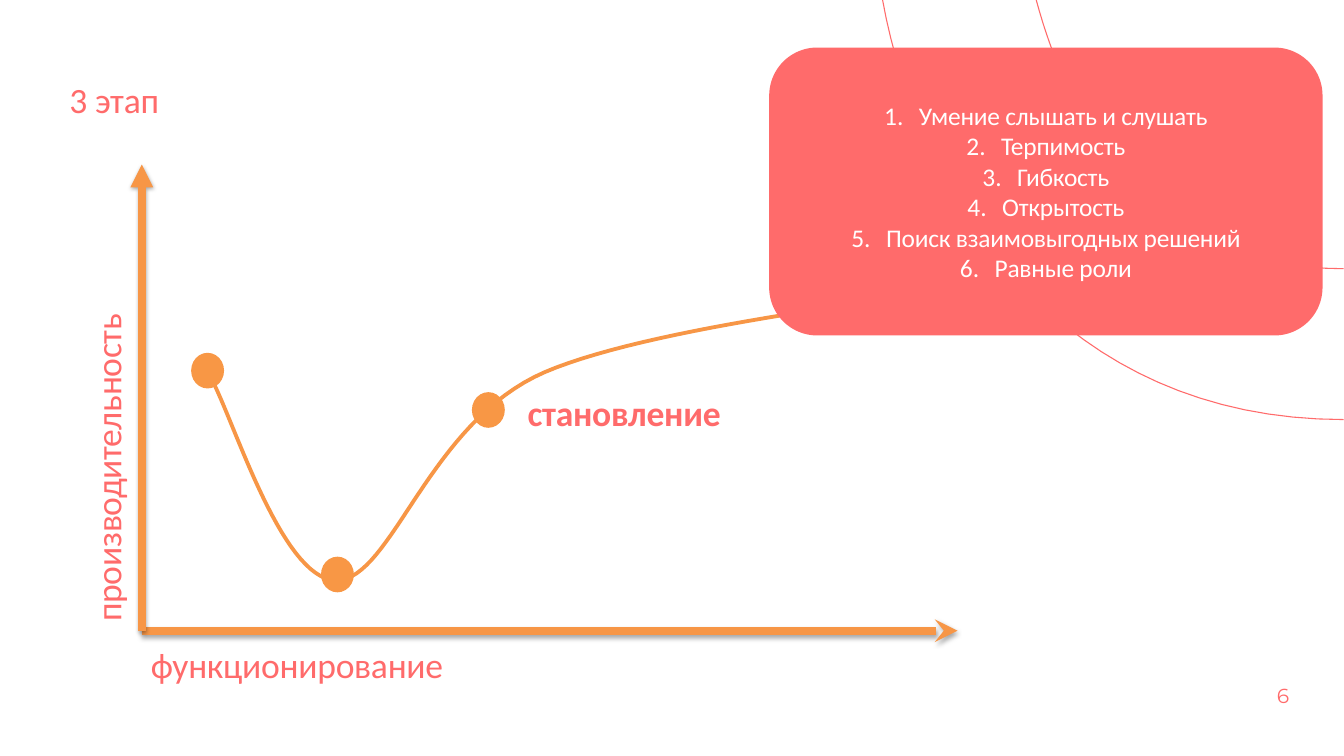
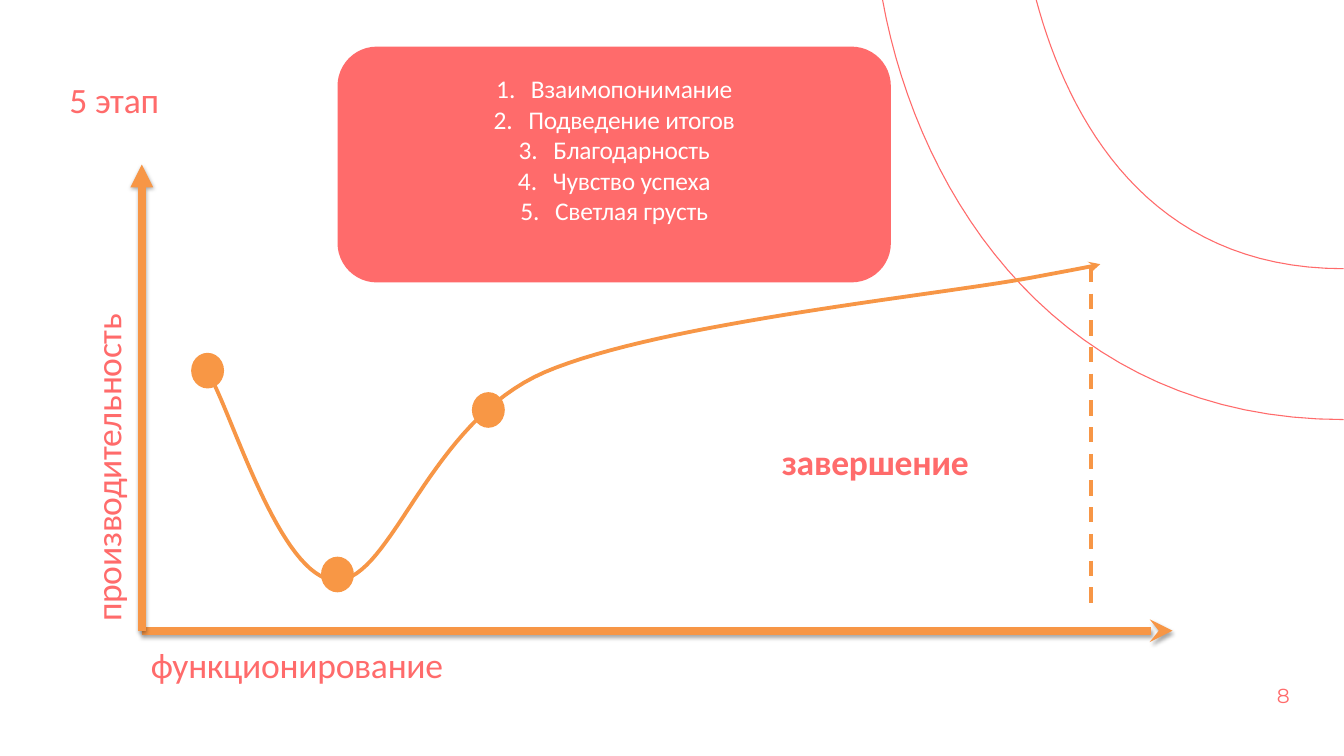
from lxml.etree import SubElement
from pptx import Presentation
from pptx.dml.color import RGBColor
from pptx.enum.dml import MSO_LINE_DASH_STYLE as Dash
from pptx.enum.shapes import MSO_CONNECTOR as Connector, MSO_SHAPE as Shape
from pptx.enum.text import MSO_ANCHOR as Anchor, PP_ALIGN as Align
from pptx.oxml import parse_xml
from pptx.oxml.ns import nsdecls, qn
from pptx.util import Inches, Pt

CORAL, ORANGE, DOT_ORANGE, WHITE = "FF6B6B", "F79646", "F89745", "FFFFFF"
ORIGIN = (1.55, 6.9)
ARCS = [
    [(11.33, 0), (11.68, 1.3), (12.55, 2.94), (14.69, 2.94)],
    [(9.65, 0), (10.05, 2.2), (11.62, 4.59), (14.69, 4.59)],
]
PRODUCTIVITY = [
    (2.28, 4.09), (2.52, 4.46), (3.06, 6.35), (3.68, 6.35),
    (4.29, 6.34), (4.68, 4.62), (5.96, 4.07),
    (7.25, 3.52), (10.36, 3.22), (11.37, 3.02),
    (12.39, 2.83), (11.92, 2.91), (12.03, 2.89),
]
STAGE_DOTS = [(2.09, 3.86), (3.51, 6.09), (5.16, 4.29)]


def color(hex_string):
    """Turn a hex string into a colour."""
    return RGBColor.from_string(hex_string)


def bezier(controls, steps=32):
    """Sample a chain of cubic curves that share their end points."""
    points = [controls[0]]
    for start in range(0, len(controls) - 1, 3):
        a, b, c, d = controls[start:start + 4]
        for step in range(1, steps + 1):
            t = step / steps
            u = 1 - t
            weights = (u ** 3, 3 * u * u * t, 3 * u * t * t, t ** 3)
            points.append(tuple(
                sum(w * v for w, v in zip(weights, axis)) for axis in zip(a, b, c, d)))
    return points


class Deck:
    """Holds the style and the current slide."""

    def __init__(self):
        """Start an empty presentation."""
        self.prs = Presentation()
        self.prs.slide_width, self.prs.slide_height = Pt(1058), Pt(595.5)
        self.slide = None

    def style(self, paragraph, size=28, hue=CORAL, font="Calibri", bold=False, spacing=-20):
        """Set the font of a whole paragraph."""
        paragraph.font.name = font
        paragraph.font.size = Pt(size)
        paragraph.font.bold = bold
        paragraph.font.color.rgb = color(hue)
        paragraph._p.pPr.find(qn("a:defRPr")).set("spc", str(spacing))

    def stroke(self, shape, hue, width, arrow=None):
        """Format a line and its arrowhead."""
        shape.line.color.rgb = color(hue)
        shape.line.width = Pt(width)
        if arrow:
            outline = shape._element.spPr.find(qn("a:ln"))
            SubElement(outline, qn("a:tailEnd"), type=arrow)

    def title(self, text):
        """Add a slide with its title."""
        self.slide = self.prs.slides.add_slide(self.prs.slide_layouts[5])
        heading = self.slide.shapes.title
        heading.left, heading.top = Inches(0.66), Inches(0.8)
        heading.width, heading.height = Inches(12.16), Inches(1.21)
        heading.text_frame.text = text
        heading.text_frame.vertical_anchor = Anchor.TOP
        paragraph = heading.text_frame.paragraphs[0]
        paragraph.alignment = Align.LEFT
        self.style(paragraph)

    def label(self, text, left, top, width, height, rotation=0, **font):
        """Add a line of text."""
        box = self.slide.shapes.add_textbox(*map(Inches, (left, top, width, height)))
        box.rotation = rotation
        box.text_frame.word_wrap = True
        box.text_frame.text = text
        self.style(box.text_frame.paragraphs[0], **font)
        return box

    def page_number(self, number):
        """Add the page number."""
        frame = self.label(str(number), 13.95, 7.46, 0.31, 0.28,
                           size=16, font="Montserrat", spacing=10).text_frame
        frame.margin_right = frame.margin_bottom = 0
        frame.margin_left = frame.margin_top = Inches(0.01)

    def curve(self, controls, hue, width, arrow=None):
        """Draw a smooth open curve."""
        start, *rest = [(Inches(x), Inches(y)) for x, y in bezier(controls)]
        builder = self.slide.shapes.build_freeform(*start)
        builder.add_line_segments(rest, close=False)
        outline = builder.convert_to_shape()
        outline.shadow.inherit = False
        outline.fill.background()
        self.stroke(outline, hue, width, arrow)

    def line(self, start, end, width, arrow=None, dash=None, shadow=False):
        """Draw a straight line, with a soft shadow if asked."""
        connector = self.slide.shapes.add_connector(
            Connector.STRAIGHT, *map(Inches, (*start, *end)))
        connector.line.dash_style = dash
        self.stroke(connector, ORANGE, width, arrow)
        effects = SubElement(connector._element.spPr, qn("a:effectLst"))
        if shadow:
            effects.append(parse_xml(
                f'<a:outerShdw {nsdecls("a")} blurRad="40000" dist="23000" dir="5400000" '
                'rotWithShape="0"><a:srgbClr val="000000"><a:alpha val="35000"/>'
                '</a:srgbClr></a:outerShdw>'))

    def block(self, kind, left, top, width, height, hue):
        """Add a filled shape without outline."""
        shape = self.slide.shapes.add_shape(kind, *map(Inches, (left, top, width, height)))
        shape.shadow.inherit = False
        shape.fill.solid()
        shape.fill.fore_color.rgb = color(hue)
        shape.line.fill.background()
        return shape

    def numbered_card(self, items, left, top, height, bottom_margin=0.05):
        """Add a rounded card with a numbered list."""
        frame = self.block(Shape.ROUNDED_RECTANGLE, left, top, 6.05, height, CORAL).text_frame
        frame.word_wrap = True
        frame.vertical_anchor = Anchor.MIDDLE
        frame.margin_bottom = Inches(bottom_margin)
        frame.text = "\n".join(items)
        for paragraph in frame.paragraphs:
            paragraph.alignment = Align.CENTER
            self.style(paragraph, size=20, hue=WHITE)
            properties = paragraph._p.pPr
            properties.set("marL", str(Inches(0.38)))
            properties.set("indent", str(-Inches(0.38)))
            properties.insert(0, parse_xml(
                f'<a:buAutoNum {nsdecls("a")} type="arabicPeriod"/>'))

    def stage(self, title, page, time_end, phase, phase_at):
        """Add a stage slide with the productivity diagram."""
        self.title(title)
        for arc in ARCS:
            self.curve(arc, CORAL, 0.85)
        self.page_number(page)
        self.curve(PRODUCTIVITY, ORANGE, 3, "stealth")
        self.line(ORIGIN, (time_end, ORIGIN[1]), 6, "stealth", shadow=True)
        self.line(ORIGIN, (ORIGIN[0], 1.8), 6, "triangle", shadow=True)
        self.label("функционирование", 1.55, 6.98, 5.51, 0.67)
        self.label("производительность", -1.83, 3.59, 6.03, 0.59, rotation=270)
        self.label(phase, *phase_at, 5.51, 0.82, bold=True)
        for left, top in STAGE_DOTS:
            self.block(Shape.OVAL, left, top, 0.36, 0.39, DOT_ORANGE)


def main():
    """Build the two stage slides."""
    deck = Deck()
    deck.stage("3 этап", 6, 10.47, "становление", (5.67, 4.23))
    deck.numbered_card(
        ["Умение слышать и слушать", "Терпимость", "Гибкость", "Открытость",
         "Поиск взаимовыгодных решений", "Равные роли"], 8.41, 0.52, 3.15)

    deck.stage("5 этап", 8, 12.82, "завершение", (8.45, 4.76))
    deck.line((11.93, 2.92), (11.93, 6.6), 3, dash=Dash.DASH)
    deck.numbered_card(
        ["Взаимопонимание", "Подведение итогов", "Благодарность", "Чувство успеха",
         "Светлая грусть"], 3.69, 0.51, 2.58, bottom_margin=0.38)
    deck.prs.save("out.pptx")


if __name__ == "__main__":
    main()
